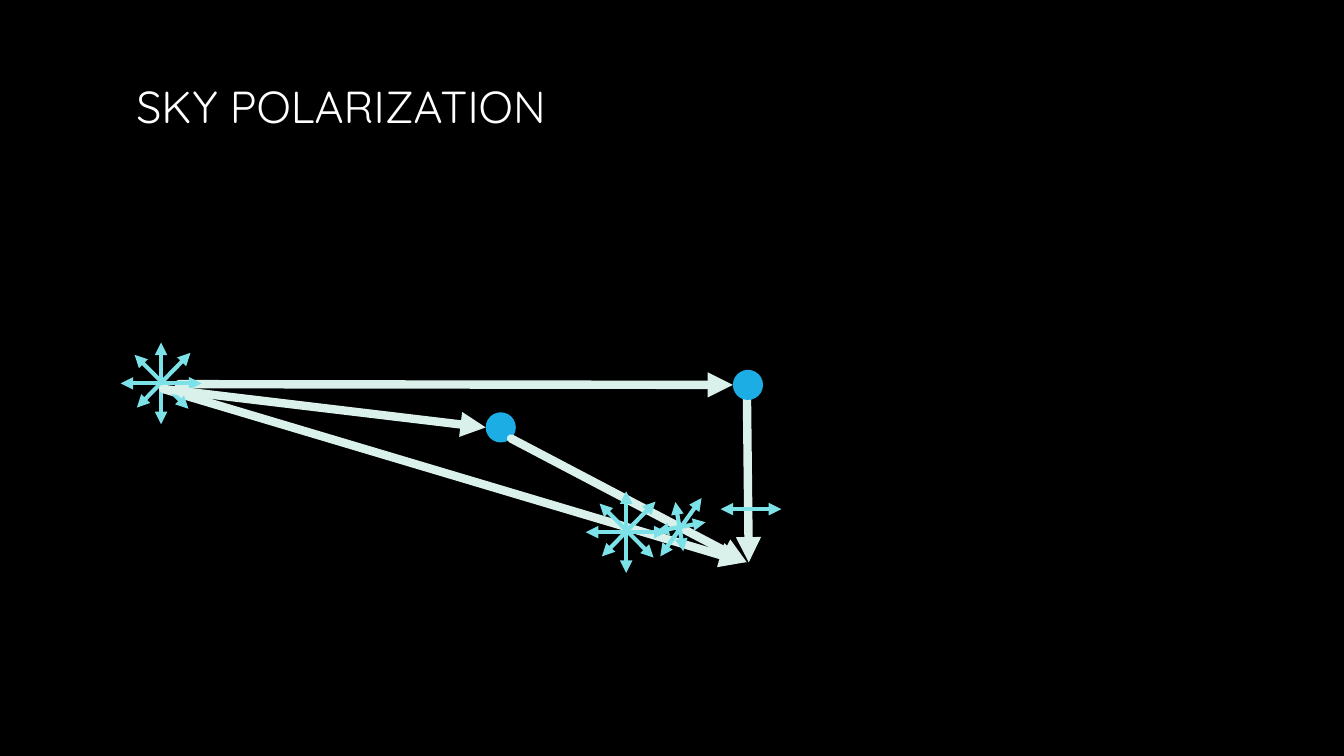
from dataclasses import dataclass

from lxml import etree
from pptx import Presentation
from pptx.dml.color import RGBColor
from pptx.enum.shapes import MSO_CONNECTOR, MSO_SHAPE
from pptx.enum.text import MSO_ANCHOR, PP_ALIGN
from pptx.oxml.ns import qn
from pptx.shapes.shapetree import GroupShapes, SlideShapes
from pptx.slide import Slide
from pptx.util import Cm, Pt

STRAIGHT = MSO_CONNECTOR.STRAIGHT
OVAL = MSO_SHAPE.OVAL
MIDDLE = MSO_ANCHOR.MIDDLE
LEFT = PP_ALIGN.LEFT

BLACK, WHITE, GREY = "000000", "FFFFFF", "A6A6A6"
MINT, AQUA, BLUE = "D9F1EA", "7DE2E7", "1CADE4"
FONT = "Quicksand"
DROP_SIZE = 0.76


@dataclass(frozen=True)
class Point:
    x: float
    y: float


@dataclass(frozen=True)
class Line:
    start: Point
    end: Point


@dataclass(frozen=True)
class Pen:
    color: str
    width: float
    ends: tuple[str, ...]


RAY = Pen(MINT, 6, ("tailEnd",))
WAVE = Pen(AQUA, 3, ("headEnd", "tailEnd"))

SUN = Point(4.11, 9.8)
NEAR = Point(12.62, 10.77)
FAR = Point(18.85, 9.7)

DIRECT = Line(SUN, Point(18.77, 14.17))
DOWN = Line(Point(18.82, 9.68), Point(18.87, 14.17))
BOUNCE = Line(Point(12.88, 11.05), Point(18.82, 14.17))
ACROSS = Line(Point(4.5, 9.68), Point(18.47, 9.7))
SLANT = Line(SUN, Point(12.24, 10.77))
FLAT = Line(Point(18.16, 12.83), Point(19.69, 12.83))

FULL = [
    Line(Point(0, -1.03), Point(0, 1.03)),
    Line(Point(-1.02, 0), Point(1.02, 0)),
    Line(Point(-0.67, -0.72), Point(0.69, 0.64)),
    Line(Point(-0.61, 0.61), Point(0.74, -0.77)),
]
PARTIAL = [
    Line(Point(-0.1, -0.62), Point(0.1, 0.62)),
    Line(Point(-0.58, 0.12), Point(0.66, -0.11)),
    Line(Point(-0.48, 0.75), Point(0.56, -0.72)),
]


def color(code: str) -> RGBColor:
    return RGBColor.from_string(code)


def add_line(shapes: SlideShapes | GroupShapes, line: Line, pen: Pen) -> None:
    start, end = line.start, line.end
    item = shapes.add_connector(
        STRAIGHT, Cm(start.x), Cm(start.y), Cm(end.x), Cm(end.y)
    )
    item.line.color.rgb = color(pen.color)
    item.line.width = Pt(pen.width)
    props = item._element.spPr
    stroke = props.find(qn("a:ln"))
    stroke.set("cap", "rnd")
    for name in pen.ends:
        etree.SubElement(stroke, qn(f"a:{name}"), type="triangle")
    etree.SubElement(props, qn("a:effectLst"))


def add_star(
    shapes: SlideShapes | GroupShapes, mid: Point, arms: list[Line]
) -> None:
    for arm in arms:
        start = Point(mid.x + arm.start.x, mid.y + arm.start.y)
        end = Point(mid.x + arm.end.x, mid.y + arm.end.y)
        add_line(shapes, Line(start, end), WAVE)


def add_drop(shapes: SlideShapes, mid: Point) -> None:
    size = Cm(DROP_SIZE)
    half = DROP_SIZE / 2
    drop = shapes.add_shape(OVAL, Cm(mid.x - half), Cm(mid.y - half), size, size)
    drop.shadow.inherit = False
    drop.fill.solid()
    drop.fill.fore_color.rgb = color(BLUE)
    drop.line.fill.background()


def set_title(slide: Slide, text: str) -> None:
    title = slide.shapes.title
    title.left, title.top = Cm(3.18), Cm(0.03)
    title.width, title.height = Cm(27.51), Cm(5.28)
    frame = title.text_frame
    frame.word_wrap = True
    frame.vertical_anchor = MIDDLE
    para = frame.paragraphs[0]
    para.alignment = LEFT
    run = para.add_run()
    run.text = text
    run.font.name = FONT
    run.font.size = Pt(32)
    fill = run.font.fill
    fill.gradient()
    fill.gradient_angle = 267
    for stop, code in zip(fill.gradient_stops, (WHITE, GREY)):
        stop.color.rgb = color(code)


def main() -> None:
    deck = Presentation()
    deck.slide_width, deck.slide_height = Cm(33.87), Cm(19.05)
    slide = deck.slides.add_slide(deck.slide_layouts[5])
    slide.background.fill.solid()
    slide.background.fill.fore_color.rgb = color(BLACK)
    set_title(slide, "SKY POLARIZATION")

    shapes = slide.shapes
    add_line(shapes, DIRECT, RAY)
    add_drop(shapes, NEAR)
    add_line(shapes, DOWN, RAY)
    add_line(shapes, BOUNCE, RAY)
    add_line(shapes, FLAT, WAVE)
    add_line(shapes, ACROSS, RAY)
    add_star(shapes, Point(4.06, 9.66), FULL)
    add_star(shapes.add_group_shape().shapes, Point(17.12, 13.27), PARTIAL)
    add_drop(shapes, FAR)
    add_line(shapes, SLANT, RAY)
    add_star(shapes, Point(15.78, 13.41), FULL)
    deck.save("out.pptx")


if __name__ == "__main__":
    main()
